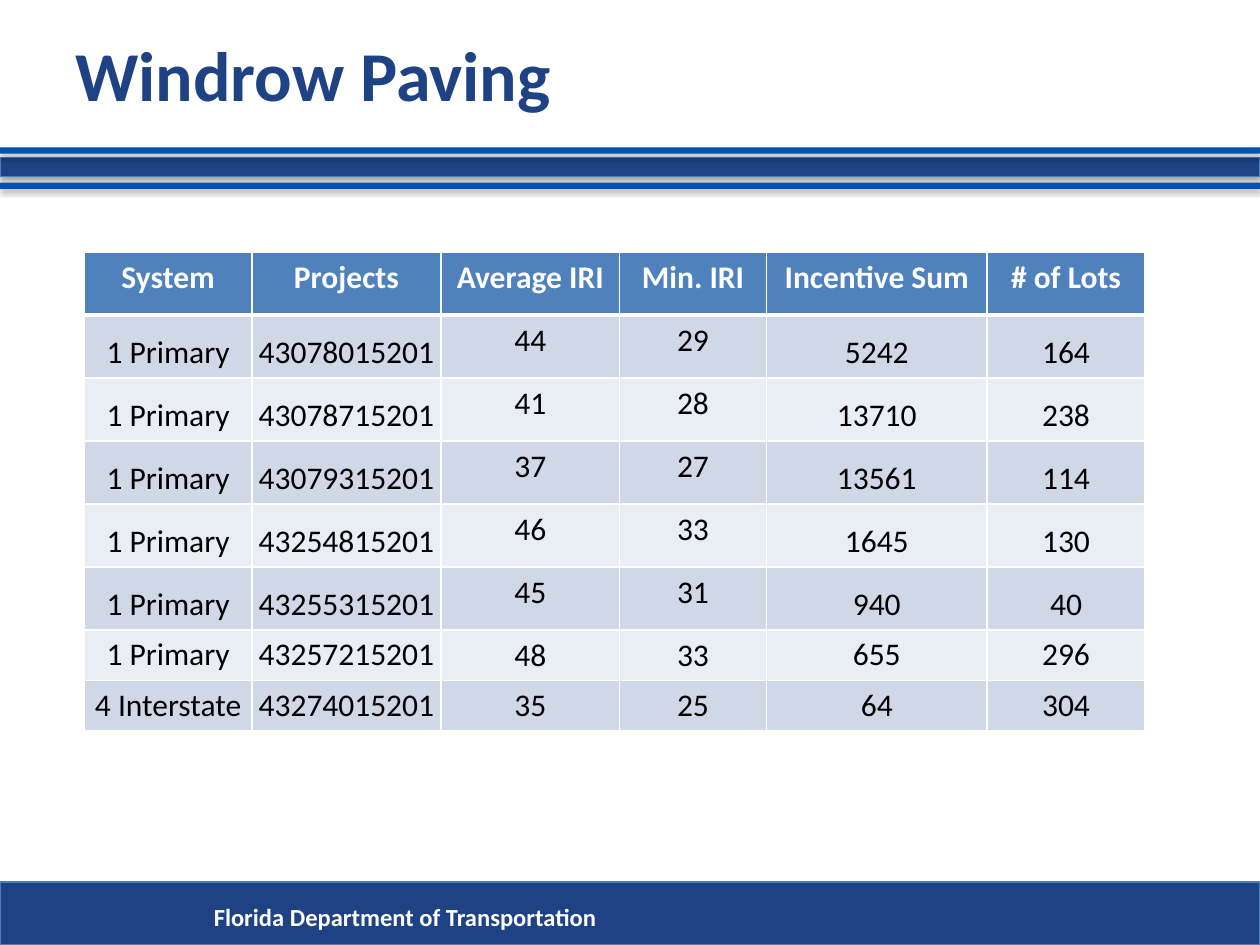
from lxml.etree import SubElement
from pptx import Presentation
from pptx.dml.color import RGBColor
from pptx.enum.shapes import MSO_SHAPE
from pptx.enum.text import MSO_ANCHOR, PP_ALIGN
from pptx.oxml.ns import qn
from pptx.util import Cm, Pt

COLORS = {
    "navy": "1F4284", "blue": "0054A8", "outline": "4B7EBC", "header": "4F81BD",
    "band_dark": "D0D8E8", "band_light": "E9EDF4",
    "white": "FFFFFF", "black": "000000",
}
FONT = "Calibri"
PAGE_WIDTH, PAGE_HEIGHT = 25.4, 19.05

HEADINGS = ["System", "Projects", "Average IRI", "Min. IRI", "Incentive Sum", "# of Lots"]
PROJECTS = [
    ["1 Primary", "43078015201", "44", "29", "5242", "164"],
    ["1 Primary", "43078715201", "41", "28", "13710", "238"],
    ["1 Primary", "43079315201", "37", "27", "13561", "114"],
    ["1 Primary", "43254815201", "46", "33", "1645", "130"],
    ["1 Primary", "43255315201", "45", "31", "940", "40"],
    ["1 Primary", "43257215201", "48", "33", "655", "296"],
    ["4 Interstate", "43274015201", "35", "25", "64", "304"],
]
COLUMN_WIDTHS = [3.38, 3.81, 3.6, 2.96, 4.45, 3.18]
ROW_HEIGHTS = [1.27] * 6 + [1.02] * 2
IRI_COLUMNS = (2, 3)


def rgb(name):
    return RGBColor.from_string(COLORS[name])


def write_text(frame, text, size, color, bold=False, align=PP_ALIGN.LEFT):
    frame.text = text
    para = frame.paragraphs[0]
    para.alignment = align
    for span in para.runs:
        span.font.name = FONT
        span.font.size = Pt(size)
        span.font.bold = bold
        span.font.color.rgb = rgb(color)


def add_label(page, left, top, width, height, text, size, color, anchor):
    box = page.shapes.add_textbox(Cm(left), Cm(top), Cm(width), Cm(height))
    box.text_frame.word_wrap = True
    box.text_frame.vertical_anchor = anchor
    write_text(box.text_frame, text, size, color, bold=True)


def add_soft_shadow(shape):
    shape.shadow.inherit = False
    effects = shape.element.spPr.find(qn("a:effectLst"))
    shadow = SubElement(effects, qn("a:outerShdw"), blurRad=str(Pt(3.1)),
                        dist=str(Pt(1.8)), dir="5400000", rotWithShape="0")
    tint = SubElement(shadow, qn("a:srgbClr"), val=COLORS["black"])
    SubElement(tint, qn("a:alpha"), val="35000")


def add_bar(page, left, top, width, height, color, outlined=False):
    bar = page.shapes.add_shape(MSO_SHAPE.RECTANGLE, Cm(left), Cm(top), Cm(width), Cm(height))
    bar.fill.solid()
    bar.fill.fore_color.rgb = rgb(color)
    if outlined:
        bar.line.color.rgb = rgb("outline")
        bar.line.width = Pt(0.75)
    else:
        bar.line.fill.background()
    add_soft_shadow(bar)


def set_borders(cell, top, bottom):
    properties = cell._tc.get_or_add_tcPr()
    for side, width in (("L", 1), ("R", 1), ("T", top), ("B", bottom)):
        line = SubElement(properties, qn(f"a:ln{side}"), w=str(Pt(width)))
        fill = SubElement(line, qn("a:solidFill"))
        SubElement(fill, qn("a:srgbClr"), val=COLORS["white"])


def add_stripes(page, left, top, width):
    """Wide navy band between two thin blue ones."""
    add_bar(page, left, top + 0.21, width, 0.38, "navy", outlined=True)
    for offset in (0.71, 0):
        add_bar(page, left, top + offset, width, 0.13, "blue")


def add_footer(page, left, top, width, height):
    add_bar(page, left, top, width, height, "navy", outlined=True)
    add_label(page, left + 4.06, top + 0.28, 20.27, 0.86,
              "Florida Department of Transportation", 14, "white", MSO_ANCHOR.TOP)


def add_project_table(page, left, top):
    rows = [HEADINGS] + PROJECTS
    table = page.shapes.add_table(
        len(rows), len(HEADINGS), Cm(left), Cm(top),
        Cm(sum(COLUMN_WIDTHS)), Cm(sum(ROW_HEIGHTS))).table
    for column, width in zip(table.columns, COLUMN_WIDTHS):
        column.width = Cm(width)
    for row, height in zip(table.rows, ROW_HEIGHTS):
        row.height = Cm(height)

    for row_index, values in enumerate(rows):
        is_header = row_index == 0
        band = "header" if is_header else "band_dark" if row_index % 2 else "band_light"
        for column_index, value in enumerate(values):
            cell = table.cell(row_index, column_index)
            # The rule under the header is thicker than the grid
            set_borders(cell, top=3 if row_index == 1 else 1, bottom=3 if is_header else 1)
            cell.fill.solid()
            cell.fill.fore_color.rgb = rgb(band)
            write_text(cell.text_frame, value, 18, "white" if is_header else "black",
                       bold=is_header, align=PP_ALIGN.CENTER)
            # Body cells sit at the bottom, except the IRI figures
            if not is_header and column_index not in IRI_COLUMNS:
                cell.vertical_anchor = MSO_ANCHOR.BOTTOM
                cell.margin_left = cell.margin_right = cell.margin_top = Cm(0.03)
                cell.margin_bottom = Cm(0.13)


def main():
    deck = Presentation()
    deck.slide_width, deck.slide_height = Cm(PAGE_WIDTH), Cm(PAGE_HEIGHT)
    page = deck.slides.add_slide(deck.slide_layouts[6])

    add_stripes(page, 0, 2.97, PAGE_WIDTH)
    add_footer(page, 0, PAGE_HEIGHT - 1.27, PAGE_WIDTH, 1.27)
    add_label(page, 1.27, 0.03, 22.86, 2.9, "Windrow Paving", 40, "navy", MSO_ANCHOR.MIDDLE)
    add_project_table(page, 1.7, 5.08)

    deck.save("out.pptx")


if __name__ == "__main__":
    main()
